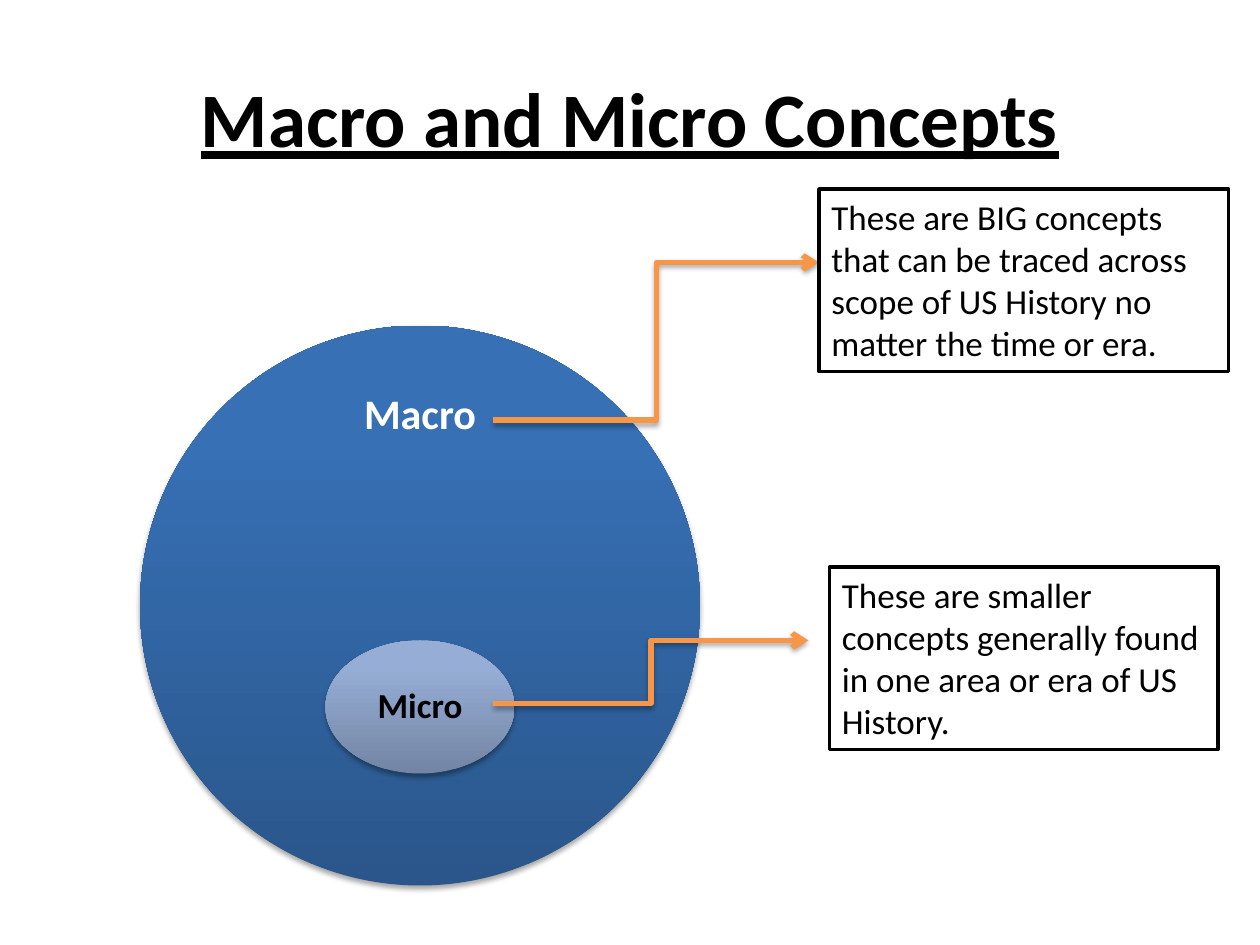
from lxml import etree
from pptx import Presentation
from pptx.dml.color import RGBColor
from pptx.enum import shapes as sh, text as tx
from pptx.oxml.ns import qn
from pptx.util import Pt

BLACK = RGBColor(0x00, 0x00, 0x00)
WHITE = RGBColor(0xFF, 0xFF, 0xFF)
ORANGE = RGBColor(0xF7, 0x96, 0x46)
BLUES = [(0, RGBColor(0x2A, 0x56, 0x8B)), (80, RGBColor(0x37, 0x70, 0xB5)),
         (100, RGBColor(0x35, 0x70, 0xB8))]
GREYS = [(0, RGBColor(0x73, 0x85, 0xA4)), (80, RGBColor(0x96, 0xAD, 0xD5)),
         (100, RGBColor(0x95, 0xAD, 0xD7))]


def node(up, tag, **attrs):
    return etree.SubElement(up, qn(tag), {k: str(v) for k, v in attrs.items()})


def shade(effects):
    """Soft shadow straight below the element."""
    cast = node(effects, "a:outerShdw", blurRad=Pt(3.1), dist=Pt(1.8),
                dir=5400000, rotWithShape=0)
    node(node(cast, "a:srgbClr", val=BLACK), "a:alpha", val=35000)


class Board:
    font = "Calibri"

    def __init__(self, deck):
        self.slide = deck.slides.add_slide(deck.slide_layouts[5])
        self.shapes = self.slide.shapes

    def fill_in(self, frame, words, size, color, bold=False, align=tx.PP_ALIGN.CENTER):
        frame.word_wrap = True
        para = frame.paragraphs[0]
        para.alignment = align
        run = para.add_run()
        run.text = words
        run.font.name, run.font.size, run.font.bold = self.font, Pt(size), bold
        run.font.color.rgb = color
        return para

    def title(self, words, x, y, w, h):
        head = self.shapes.title
        head.left, head.top, head.width, head.height = map(Pt, (x, y, w, h))
        head.text_frame.vertical_anchor = tx.MSO_ANCHOR.MIDDLE
        para = self.fill_in(head.text_frame, words, 44, BLACK, True)
        para.runs[0].font.underline = True

    def disc(self, x, y, w, h, stops):
        oval = self.shapes.add_shape(sh.MSO_SHAPE.OVAL, *map(Pt, (x, y, w, h)))
        oval.fill.gradient()
        oval.fill.gradient_angle = 90
        ramp = oval.element.spPr.find(".//" + qn("a:gsLst"))
        for old in list(ramp):
            ramp.remove(old)
        for pos, color in stops:
            node(node(ramp, "a:gs", pos=pos * 1000), "a:srgbClr", val=color)
        oval.line.fill.background()
        oval.shadow.inherit = False
        shade(oval.element.spPr.find(qn("a:effectLst")))
        return oval

    def label(self, words, x, y, w, h, size, color, inset):
        box = self.shapes.add_textbox(*map(Pt, (x, y, w, h)))
        frame = box.text_frame
        frame.vertical_anchor = tx.MSO_ANCHOR.MIDDLE
        frame.margin_left = frame.margin_right = Pt(inset)
        frame.margin_top = frame.margin_bottom = Pt(inset)
        self.fill_in(frame, words, size, color, True).line_spacing = 0.9
        return box

    def arrow(self, *ends):
        link = self.shapes.add_connector(sh.MSO_CONNECTOR.ELBOW, *map(Pt, ends))
        link.line.color.rgb = ORANGE
        link.line.width = Pt(3)
        props = link.element.spPr
        node(props.find(qn("a:ln")), "a:tailEnd", type="arrow")
        shade(node(props, "a:effectLst"))

    def note(self, words, x, y, w, h):
        box = self.shapes.add_shape(sh.MSO_SHAPE.RECTANGLE, *map(Pt, (x, y, w, h)))
        box.shadow.inherit = False
        box.fill.solid()
        box.fill.fore_color.rgb = WHITE
        box.line.color.rgb = BLACK
        box.line.width = Pt(2)
        frame = box.text_frame
        frame.vertical_anchor = tx.MSO_ANCHOR.TOP
        frame.auto_size = tx.MSO_AUTO_SIZE.SHAPE_TO_FIT_TEXT
        self.fill_in(frame, words, 20, BLACK, align=tx.PP_ALIGN.LEFT)


def main():
    deck = Presentation()
    deck.slide_width, deck.slide_height = Pt(720), Pt(540)
    board = Board(deck)
    board.title("Macro and Micro Concepts", 36, 21.6, 648, 90)

    # Nested circles
    board.shapes.add_group_shape([
        board.disc(80, 186, 320, 320, BLUES),
        board.label("Macro", 156, 210, 168, 55, 24, WHITE, 13.5),
        board.disc(186, 366, 108, 76, GREYS),
        board.label("Micro", 202, 385, 76, 38, 20, BLACK, 11.5),
    ])

    # Arrows to the notes
    board.arrow(282, 240, 468, 150)
    board.arrow(282, 402, 462, 366)

    # Notes
    board.note("These are BIG concepts that can be traced across scope of "
               "US History no matter the time or era.", 468, 108, 234, 104.4)
    board.note("These are smaller concepts generally found in one area or "
               "era of US History.", 474, 324, 222, 104.4)

    deck.save("out.pptx")


if __name__ == "__main__":
    main()
